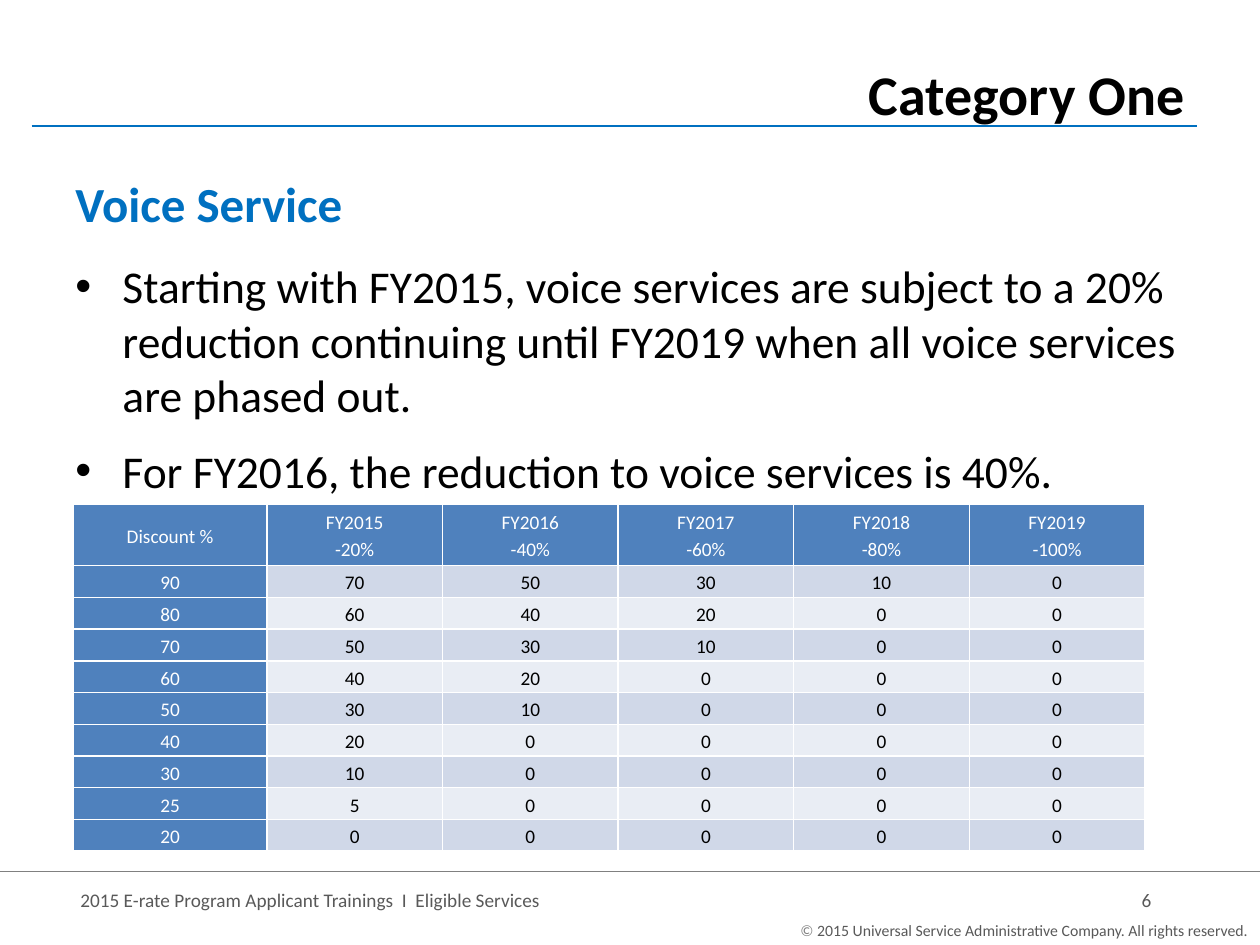
from lxml.etree import SubElement
from pptx import Presentation
from pptx.dml.color import RGBColor
from pptx.enum.shapes import MSO_CONNECTOR
from pptx.enum.text import MSO_ANCHOR as Anchor, PP_ALIGN as Align
from pptx.oxml.ns import qn
from pptx.util import Cm, Pt

FONT = "Calibri"
BLACK, WHITE, BLUE = "000000", "FFFFFF", "0070C0"
GRAY, DARK_GRAY = "808080", "595959"
HEADER_FILL, BAND_FILLS = "4F81BD", ("D0D8E8", "E9EDF4")

TITLE = "Category One"
HEADING = "Voice Service"
BULLETS = [
    "Starting with FY2015, voice services are subject to a 20% reduction "
    "continuing until FY2019 when all voice services are phased out.",
    "For FY2016, the reduction to voice services is 40%.",
]
FOOTER = "2015 E-rate Program Applicant Trainings  I  Eligible Services\t6"
COPYRIGHT = [
    ("© ", GRAY),
    ("2015 Universal Service Administrative Company. All rights reserved.", DARK_GRAY),
]
DISCOUNTS = [90, 80, 70, 60, 50, 40, 30, 25, 20]
REDUCTIONS = {"FY2015": 20, "FY2016": 40, "FY2017": 60, "FY2018": 80, "FY2019": 100}

LABEL_WIDTH, YEAR_WIDTH = 3.9, 3.54
HEADER_HEIGHT, ROW_HEIGHT = 1.24, 0.64


def rgb(value):
    return RGBColor.from_string(value)


def write(frame, paragraphs, size, color=BLACK, bold=False, align=Align.LEFT,
          after=None, line_spacing=None, bullet=None, tab=None):
    frame.word_wrap = True
    for index, content in enumerate(paragraphs):
        paragraph = frame.add_paragraph() if index else frame.paragraphs[0]
        paragraph.alignment = align
        if after is not None:
            paragraph.space_after = Pt(after)
        if line_spacing:
            paragraph.line_spacing = line_spacing
        properties = paragraph._p.get_or_add_pPr()
        if bullet:
            indent = Cm(0.95)
            properties.set("marL", str(indent))
            properties.set("indent", str(-indent))
            SubElement(properties, qn("a:buFont"), typeface="Arial")
            SubElement(properties, qn("a:buChar"), char=bullet)
        if tab:
            tabs = SubElement(properties, qn("a:tabLst"))
            SubElement(tabs, qn("a:tab"), pos=str(Cm(tab)), algn="r")
        runs = [(content, color)] if isinstance(content, str) else content
        for text, run_color in runs:
            run = paragraph.add_run()
            run.text = text
            run.font.name = FONT
            run.font.size = Pt(size)
            run.font.bold = bold
            run.font.color.rgb = rgb(run_color)


def add_text(slide, box, paragraphs, size, **text_format):
    shape = slide.shapes.add_textbox(*map(Cm, box))
    write(shape.text_frame, paragraphs, size, **text_format)


def add_rule(slide, left, right, top, color, width):
    connector = slide.shapes.add_connector(
        MSO_CONNECTOR.STRAIGHT, Cm(left), Cm(top), Cm(right), Cm(top))
    connector.line.color.rgb = rgb(color)
    connector.line.width = Pt(width)
    SubElement(connector._element.spPr, qn("a:effectLst"))


def format_cell(cell, lines, fill, color):
    cell.margin_left = cell.margin_right = Cm(0.18)
    cell.margin_top = cell.margin_bottom = 0
    cell.vertical_anchor = Anchor.MIDDLE
    write(cell.text_frame, lines, 11, color=color, align=Align.CENTER, line_spacing=1.15)
    properties = cell._tc.get_or_add_tcPr()
    for side in ("lnL", "lnR", "lnT", "lnB"):
        border = SubElement(properties, qn(f"a:{side}"), w=str(Pt(1)))
        border_fill = SubElement(border, qn("a:solidFill"))
        SubElement(border_fill, qn("a:srgbClr"), val=WHITE)
    cell.fill.solid()
    cell.fill.fore_color.rgb = rgb(fill)


def add_discount_table(slide, left, top):
    rows = [[["Discount %"]] + [[year, f"-{cut}%"] for year, cut in REDUCTIONS.items()]]
    for discount in DISCOUNTS:
        values = [max(discount - cut, 0) for cut in REDUCTIONS.values()]
        rows.append([[str(value)] for value in [discount] + values])
    widths = [LABEL_WIDTH] + [YEAR_WIDTH] * len(REDUCTIONS)
    heights = [HEADER_HEIGHT] + [ROW_HEIGHT] * len(DISCOUNTS)
    table = slide.shapes.add_table(
        len(rows), len(widths), Cm(left), Cm(top), Cm(sum(widths)), Cm(sum(heights))).table
    for column, width in zip(table.columns, widths):
        column.width = Cm(width)
    for row_index, (row, height) in enumerate(zip(rows, heights)):
        table.rows[row_index].height = Cm(height)
        for column_index, lines in enumerate(row):
            is_header = row_index == 0 or column_index == 0
            fill = HEADER_FILL if is_header else BAND_FILLS[(row_index - 1) % 2]
            format_cell(table.cell(row_index, column_index), lines, fill,
                        WHITE if is_header else BLACK)


def main():
    presentation = Presentation()
    presentation.slide_width, presentation.slide_height = Cm(25.4), Cm(19.05)
    slide = presentation.slides.add_slide(presentation.slide_layouts[6])
    add_text(slide, (2.64, 18.44, 22.76, 0.64), [COPYRIGHT], 9, align=Align.RIGHT)
    add_rule(slide, 0.64, 24.13, 2.54, BLUE, 1.25)
    add_rule(slide, 0, 25.4, 17.57, GRAY, 0.75)
    add_text(slide, (1.37, 17.78, 22.76, 0.86), [FOOTER], 11, color=DARK_GRAY, tab=21.59)
    add_text(slide, (1.27, 5.08, 22.86, 12.07), BULLETS, 26, after=12, bullet="•")
    add_text(slide, (6.99, 1.07, 17.14, 1.47), [TITLE], 32, bold=True, align=Align.RIGHT)
    add_text(slide, (1.27, 3.38, 22.86, 1.7), [HEADING], 28, color=BLUE, bold=True)
    add_discount_table(slide, 1.48, 10.16)
    presentation.save("out.pptx")


if __name__ == "__main__":
    main()
